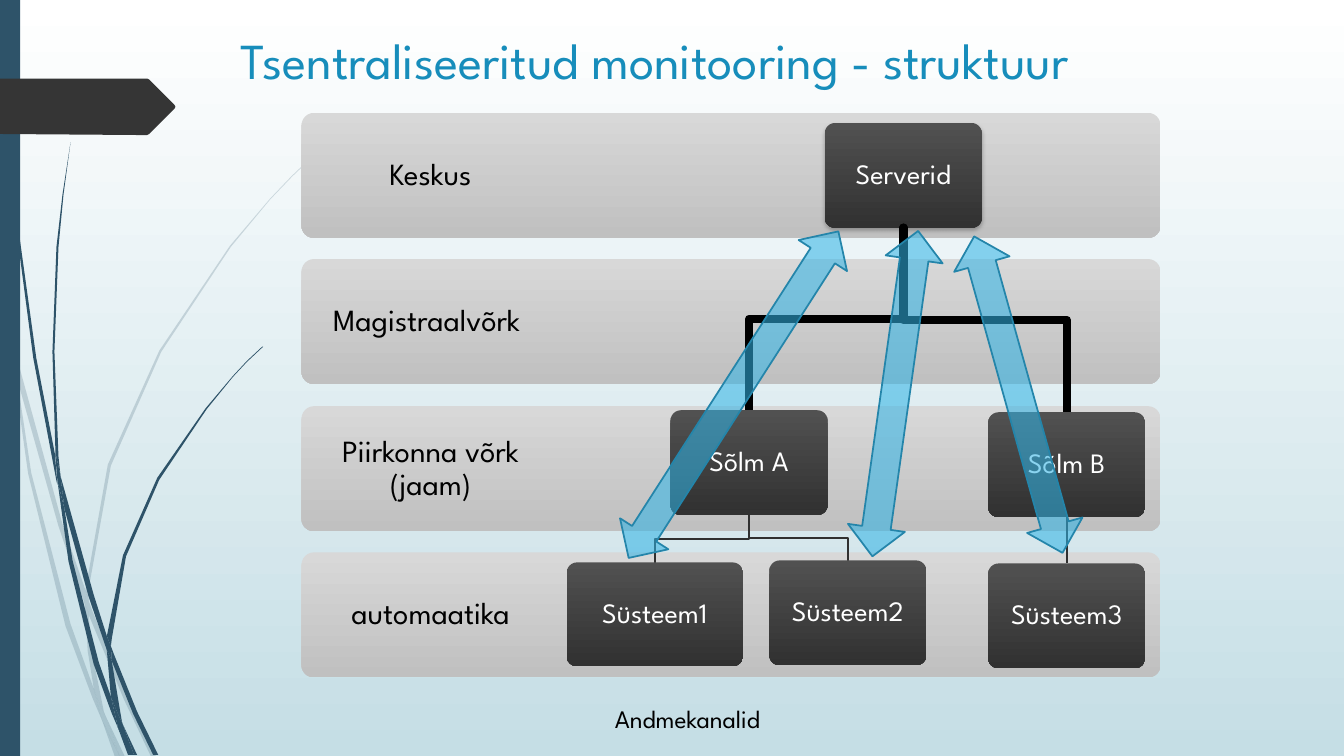
import lxml.etree
import pptx
import pptx.dml.color
import pptx.enum.shapes
import pptx.enum.text
import pptx.oxml.ns
import pptx.util

SHAPE = pptx.enum.shapes.MSO_SHAPE
ALIGN = pptx.enum.text.PP_ALIGN
ANCHOR = pptx.enum.text.MSO_ANCHOR
qn = pptx.oxml.ns.qn

FONT = "League Spartan"
TEAL, TAG, TITLE = "2E5369", "353535", "178DBB"
SKY, BAND, NODE = ("FFFFFF", "C5DEE5"), ("D8D8D8", "C0C0C0"), ("515151", "313131")
CHANNEL, CHANNEL_EDGE = "31B4E6", "2485AA"
BACKBONE, LOCAL = ("000000", 6), ("303030", 1.25)

LEVELS = ["Keskus", "Magistraalvõrk ", "Piirkonna võrk (jaam)", "automaatika"]
NODES = [
    ("Serverid", None, None, (818, 122, 156, 104)),
    ("Sõlm A", "Serverid", BACKBONE, (665, 407, 156, 104)),
    ("Süsteem1", "Sõlm A", LOCAL, (562, 558, 175, 103)),
    ("Süsteem2", "Sõlm A", LOCAL, (763, 556, 156, 104)),
    ("Sõlm B", "Serverid", BACKBONE, (980, 409, 156, 104)),
    ("Süsteem3", None, None, (980, 559, 156, 104)),
]
CHANNELS = [((535, 363, 385, 57), 302.7), ((725, 362, 326, 57), 278), ((847, 363, 326, 57), 254.4)]

PALE_GRASS = [
    [(11, 350), (9, 322), (0, 282), (0, 299), (10, 344)],
    [(58, 522), (84, 599), (85, 586), (62, 520), (14, 345), (17, 376)],
    [(92, 607), (88, 596), (88, 610), (123, 694), (150, 751), (155, 751), (127, 692)],
    [(119, 751), (124, 751), (105, 711)],
    [(93, 683), (70, 619), (31, 469), (17, 376), (11, 350), (28, 470), (65, 621), (92, 693),
     (101, 714), (99, 707)],
    [(84, 599), (87, 646), (93, 683), (96, 692), (105, 711), (103, 706), (91, 646), (88, 610),
     (88, 608)],
    [(88, 584), (110, 462), (160, 349), (229, 245), (268, 198), (290, 175), (312, 154),
     (312, 153), (289, 175), (268, 197), (228, 244), (158, 348), (107, 461), (85, 584),
     (85, 586), (88, 596)],
    [(101, 714), (114, 751), (119, 751)],
    [(88, 608), (88, 610), (88, 596), (85, 586), (84, 599)],
    [(96, 692), (93, 683), (99, 707), (101, 714), (119, 751), (105, 711)],
]
DARK_GRASS = [
    [(7, 110), (17, 233), (33, 355), (56, 477), (57, 481), (55, 457), (55, 453), (36, 355),
     (19, 232), (8, 109), (5, 48), (4, 0), (3, 0), (4, 48)],
    [(88, 592), (106, 645), (106, 633), (106, 631), (93, 590), (60, 472), (64, 505)],
    [(113, 649), (110, 641), (111, 656), (132, 708), (152, 749), (157, 749), (136, 706)],
    [(110, 691), (98, 657), (72, 556), (64, 505), (57, 477), (68, 557), (93, 659), (111, 708),
     (117, 722), (116, 717)],
    [(60, 472), (58, 453), (54, 349), (58, 245), (63, 193), (70, 141), (62, 193), (56, 245),
     (52, 349), (55, 449)],
    [(133, 749), (136, 749), (122, 719)],
    [(57, 477), (64, 505), (60, 472), (55, 449), (55, 453)],
    [(111, 633), (125, 552), (158, 476), (205, 406), (231, 374), (245, 359), (261, 344),
     (260, 344), (245, 358), (231, 373), (204, 405), (156, 474), (122, 551), (106, 631),
     (110, 641)],
    [(117, 722), (127, 749), (131, 749)],
    [(106, 645), (110, 691), (116, 706), (122, 719), (121, 716), (111, 656), (109, 651)],
    [(106, 645), (109, 651), (111, 656), (110, 641), (106, 631), (106, 633)],
    [(116, 706), (110, 691), (116, 717), (117, 722), (130, 749), (133, 749), (122, 719)],
]
TAG_OUTLINE = [(173, 108), (148, 133), (146, 134), (136, 134), (0, 133), (0, 78), (136, 78),
               (146, 78), (148, 79), (173, 104), (174, 106)]


def px(length):
    return round(length * 9144)


def color(value):
    return pptx.dml.color.RGBColor.from_string(value)


def write(shape, text, size=20, ink="FFFFFF", align=ALIGN.CENTER, anchor=ANCHOR.MIDDLE,
          insets=(8, 8, 8, 8), spacing=0.9):
    frame = shape.text_frame
    frame.word_wrap = True
    frame.vertical_anchor = anchor
    frame.margin_left, frame.margin_top, frame.margin_right, frame.margin_bottom = map(px, insets)
    paragraph = frame.paragraphs[0]
    paragraph.alignment = align
    paragraph.line_spacing = spacing
    run = paragraph.add_run()
    run.text = text
    run.font.name, run.font.size = FONT, pptx.util.Pt(size)
    run.font.color.rgb = color(ink)


class Diagram:
    """Draws styled elements on one slide, with lengths in px."""

    def __init__(self, slide):
        self.slide = slide
        self.shapes = slide.shapes

    def paint(self, fill, paint, alpha=None, owner=None):
        if isinstance(paint, tuple):
            fill.gradient()
            fill.gradient_angle = 270
            for stop, shade in zip(fill.gradient_stops, paint):
                stop.color.rgb = color(shade)
            return
        fill.solid()
        fill.fore_color.rgb = color(paint)
        if alpha:
            solid = owner.element.spPr.find(qn("a:solidFill"))
            lxml.etree.SubElement(solid[0], qn("a:alpha"), val=str(alpha * 1000))

    def stroke(self, shape, line):
        if line is None:
            shape.line.fill.background()
            return
        shape.line.color.rgb = color(line[0])
        shape.line.width = pptx.util.Pt(line[1])

    def shape(self, kind, box, paint, line=None, alpha=None, rotation=0, corner=None):
        shape = self.shapes.add_shape(kind, *map(px, box))
        shape.shadow.inherit = False
        shape.rotation = rotation
        if corner is not None:
            shape.adjustments[0] = corner
        self.paint(shape.fill, paint, alpha, shape)
        self.stroke(shape, line)
        return shape

    def outline(self, points, paint=None, line=None, alpha=None):
        start, *rest = [(px(x), px(y)) for x, y in points]
        builder = self.shapes.build_freeform(*start)
        builder.add_line_segments(rest, close=paint is not None)
        shape = builder.convert_to_shape()
        shape.shadow.inherit = False
        if paint:
            self.paint(shape.fill, paint, alpha, shape)
        else:
            shape.fill.background()
        self.stroke(shape, line)
        if not paint:
            shape.element.spPr.find(qn("a:ln")).set("cap", "rnd")

    def branch(self, parent, child, line):
        x1, y1 = parent[0] + parent[2] / 2, parent[1] + parent[3]
        x2, y2 = child[0] + child[2] / 2, child[1]
        bend = (y1 + y2) / 2
        self.outline([(x1, y1), (x1, bend), (x2, bend), (x2, y2)], line=line)

    def link(self, upper, lower, line):
        link = self.shapes.add_connector(pptx.enum.shapes.MSO_CONNECTOR.STRAIGHT, 0, 0, 0, 0)
        link.begin_connect(upper, 2)
        link.end_connect(lower, 0)
        self.stroke(link, line)
        lxml.etree.SubElement(link.element.spPr, qn("a:effectLst"))

    def drop_shadow(self, shape):
        effects = shape.element.spPr.find(qn("a:effectLst"))
        shadow = lxml.etree.SubElement(effects, qn("a:outerShdw"), blurRad="38100",
                                       dist="25400", dir="5400000", rotWithShape="0")
        shade = lxml.etree.SubElement(shadow, qn("a:srgbClr"), val="000000")
        lxml.etree.SubElement(shade, qn("a:alpha"), val="25000")

    def text(self, box, text, **style):
        style = {"insets": (10, 5, 10, 5), "align": ALIGN.LEFT, "spacing": 1.0, **style}
        write(self.shapes.add_textbox(*map(px, box)), text, **style)


def main():
    deck = pptx.Presentation()
    deck.slide_width, deck.slide_height = pptx.util.Inches(13.33), pptx.util.Inches(7.5)
    diagram = Diagram(deck.slides.add_slide(deck.slide_layouts[6]))
    diagram.paint(diagram.slide.background.fill, SKY)

    for grass, alpha in ((PALE_GRASS, 20), (DARK_GRASS, None)):
        for blade in grass:
            diagram.outline(blade, TEAL, alpha=alpha)
    diagram.shape(SHAPE.RECTANGLE, (0, 0, 20, 750), TEAL)
    diagram.outline(TAG_OUTLINE, TAG)
    diagram.text((229, 24, 1029, 84), "Tsentraliseeritud monitooring - struktuur",
                 size=36, ink=TITLE, insets=(10, 5, 10, 19))

    for row, level in enumerate(LEVELS):
        band = diagram.shape(SHAPE.ROUNDED_RECTANGLE, (299, 112 + round(row * 436 / 3), 852, 124),
                             BAND, corner=0.1)
        write(band, level, size=22, ink="000000", insets=(13, 13, 609, 13))

    boxes = {name: box for name, _, _, box in NODES}
    nodes = {}
    for name, parent, line, box in NODES:
        if parent:
            diagram.branch(boxes[parent], box, line)
        nodes[name] = diagram.shape(SHAPE.ROUNDED_RECTANGLE, box, NODE, corner=0.1)
        write(nodes[name], name)
    diagram.drop_shadow(nodes["Serverid"])
    diagram.link(nodes["Sõlm B"], nodes["Süsteem3"], LOCAL)

    diagram.text((600, 693, 213, 40), "Andmekanalid", size=18, ink="000000", anchor=ANCHOR.TOP)
    for box, angle in CHANNELS:
        diagram.shape(SHAPE.LEFT_RIGHT_ARROW, box, CHANNEL, line=(CHANNEL_EDGE, 1.25),
                      alpha=56, rotation=angle)
    deck.save("out.pptx")


if __name__ == "__main__":
    main()
